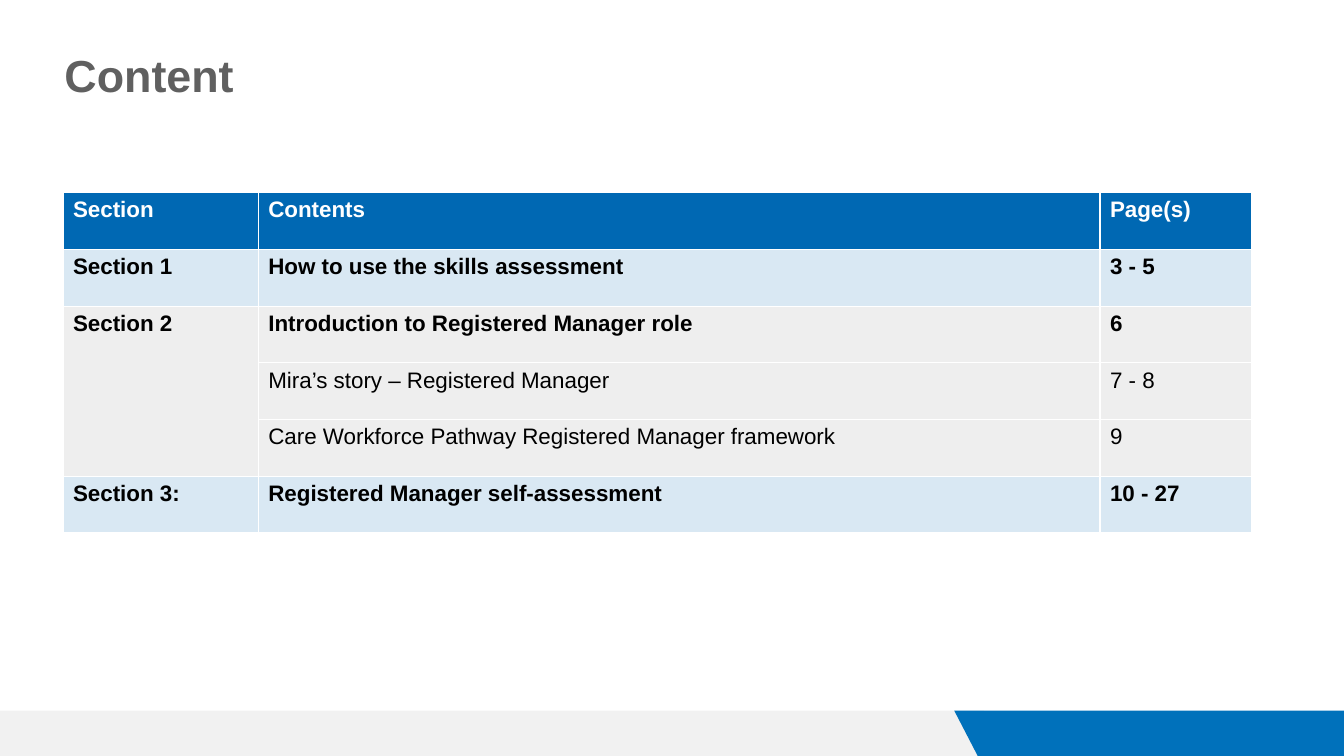
from lxml.etree import SubElement
from pptx import Presentation
from pptx.dml.color import RGBColor as RGB
from pptx.enum.text import MSO_ANCHOR as ANCHOR
from pptx.oxml import parse_xml
from pptx.oxml.ns import nsdecls, qn
from pptx.util import Inches, Pt

COLORS = {
    "band": "0068B3",
    "footer": "0071BB",
    "grey": "CACACA",
    "title": "606060",
    "black": "000000",
    "white": "FFFFFF",
}
COLS, ROWS = 160, 90


class Deck:
    """Hold the style and current slide, measured on a 160 by 90 grid."""

    def __init__(self):
        self.prs = Presentation()
        self.prs.slide_width, self.prs.slide_height = Inches(13.33), Inches(7.5)
        self.s = self.prs.slides.add_slide(self.prs.slide_layouts[6])

    def x(self, cols):
        return round(self.prs.slide_width * cols / COLS)

    def y(self, rows):
        return round(self.prs.slide_height * rows / ROWS)

    def paint(self, fill, element, color, opacity=100):
        fill.solid()
        fill.fore_color.rgb = RGB.from_string(COLORS[color])
        if opacity < 100:
            clr = element.find(f"{qn('a:solidFill')}/{qn('a:srgbClr')}")
            SubElement(clr, qn("a:alpha"), val=str(opacity * 1000))

    def add_text(self, tf, text, color, **style):
        p = tf.paragraphs[0]
        r = p.add_run()
        r.text = text
        for name, value in {"name": "Arial", **style}.items():
            setattr(r.font, name, value)
        r.font.color.rgb = RGB.from_string(COLORS[color])
        return p

    def panel(self, points, color, opacity=100):
        (x, y), *rest = [(self.x(c), self.y(r)) for c, r in points]
        builder = self.s.shapes.build_freeform(x, y)
        builder.add_line_segments(rest, close=True)
        sp = builder.convert_to_shape()
        sp.shadow.inherit = False
        self.paint(sp.fill, sp._element.spPr, color, opacity)
        sp.line.fill.background()

    def title(self, text, col, row, width, height):
        sp = self.s.shapes.add_textbox(self.x(col), self.y(row), self.x(width), self.y(height))
        tf = sp.text_frame
        tf.word_wrap, tf.vertical_anchor = True, ANCHOR.MIDDLE
        p = self.add_text(tf, text, "title", size=Pt(32), bold=True)
        p.line_spacing = 0.9

    def borders(self, cell):
        tc_pr = cell._tc.get_or_add_tcPr()
        for i, side in enumerate("LRTB"):
            tc_pr.insert(i, parse_xml(
                f'<a:ln{side} {nsdecls("a")} w="12700"><a:solidFill>'
                f'<a:srgbClr val="{COLORS["white"]}"/></a:solidFill></a:ln{side}>'))

    def table(self, rows, col, row, widths, height):
        frame = self.s.shapes.add_table(
            len(rows), len(widths), self.x(col), self.y(row),
            self.x(sum(widths)), self.y(height * len(rows)))
        table = frame.table
        for column, width in zip(table.columns, widths):
            column.width = self.x(width)
        for i, (texts, fill, opacity, color, bold) in enumerate(rows):
            table.rows[i].height = self.y(height)
            for j, text in enumerate(texts):
                cell = table.cell(i, j)
                self.paint(cell.fill, cell._tc.get_or_add_tcPr(), fill, opacity)
                self.borders(cell)
                if text:
                    self.add_text(cell.text_frame, text, color, size=Pt(16), bold=bold)
        return table


def main():
    deck = Deck()
    top = 84.6
    deck.panel([(119.9, ROWS), (117.1, top), (0, top), (0, ROWS)], "grey", 25)
    deck.panel([(COLS, ROWS), (COLS, top), (113.6, top), (116.4, ROWS)], "footer")
    deck.title("Content", 6.5, 4.7, 116.9, 9.2)

    header = ("band", 100, "white", True)
    blue = ("band", 15, "black", True)
    grey = ("grey", 30, "black", True)
    detail = ("grey", 30, "black", False)
    table = deck.table([
        (("Section", "Contents", "Page(s)"), *header),
        (("Section 1", "How to use the skills assessment", "3 - 5"), *blue),
        (("Section 2", "Introduction to Registered Manager role", "6"), *grey),
        (("", "Mira’s story – Registered Manager", "7 - 8"), *detail),
        (("", "Care Workforce Pathway Registered Manager framework", "9"), *detail),
        (("Section 3:", "Registered Manager self-assessment", "10 - 27"), *blue),
    ], 7.5, 22.95, (23.25, 100.2, 18), 6.75)
    table.cell(2, 0).merge(table.cell(4, 0))
    deck.prs.save("out.pptx")


if __name__ == "__main__":
    main()
